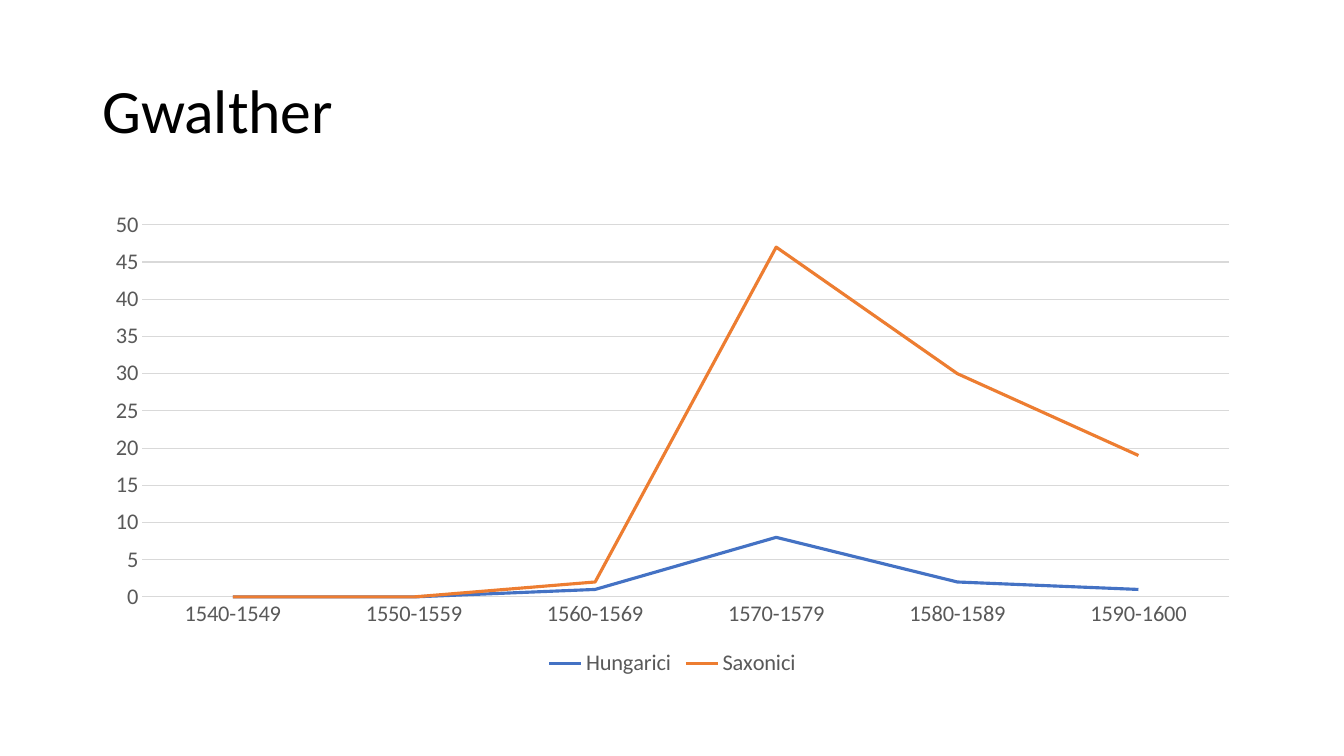
from pptx import Presentation
from pptx.chart.data import CategoryChartData
from pptx.dml.color import RGBColor
from pptx.enum.chart import XL_CHART_TYPE, XL_LEGEND_POSITION, XL_MARKER_STYLE, XL_TICK_MARK
from pptx.enum.text import MSO_ANCHOR, PP_ALIGN
from pptx.util import Inches, Pt

LINE_STACKED = XL_CHART_TYPE.LINE_STACKED
BOTTOM = XL_LEGEND_POSITION.BOTTOM
NO_MARKER = XL_MARKER_STYLE.NONE
NO_TICK = XL_TICK_MARK.NONE
MIDDLE = MSO_ANCHOR.MIDDLE
LEFT = PP_ALIGN.LEFT

BLACK = RGBColor(0x00, 0x00, 0x00)
GRAY = RGBColor(0x59, 0x59, 0x59)
LIGHT = RGBColor(0xD9, 0xD9, 0xD9)
BLUE = RGBColor(0x44, 0x72, 0xC4)
ORANGE = RGBColor(0xED, 0x7D, 0x31)

TITLE = "Gwalther"
PERIODS = ["1540-1549", "1550-1559", "1560-1569", "1570-1579", "1580-1589", "1590-1600"]
SERIES = [
    ("Hungarici", [0, 0, 1, 8, 2, 1], BLUE),
    ("Saxonici", [0, 0, 1, 39, 28, 18], ORANGE),
]
TITLE_BOX = (0.92, 0.4, 11.5, 1.45)
CHART_BOX = (0.92, 2, 11.5, 4.76)
TITLE_FONT = {"name": "Calibri", "size": Pt(44), "bold": False}
CHART_FONT = {"name": "Calibri", "size": Pt(16), "bold": False}


def set_font(font, values, color):
    for key, value in values.items():
        setattr(font, key, value)
    font.color.rgb = color


def set_line(line, color, width):
    line.color.rgb = color
    line.width = Pt(width)


def add_title(slide):
    title = slide.shapes.title
    title.left, title.top, title.width, title.height = map(Inches, TITLE_BOX)
    tf = title.text_frame
    tf.text = TITLE
    tf.vertical_anchor = MIDDLE
    p = tf.paragraphs[0]
    p.alignment = LEFT
    p.line_spacing = 0.9
    set_font(p.runs[0].font, TITLE_FONT, BLACK)


def add_line_chart(slide):
    data = CategoryChartData()
    data.categories = PERIODS
    for name, values, _ in SERIES:
        data.add_series(name, values)
    chart = slide.shapes.add_chart(LINE_STACKED, *map(Inches, CHART_BOX), data).chart
    set_font(chart.font, CHART_FONT, BLACK)
    chart.has_title = False
    chart.has_legend = True
    chart.legend.position = BOTTOM
    chart.legend.include_in_layout = False
    set_font(chart.legend.font, CHART_FONT, GRAY)

    for axis in (chart.category_axis, chart.value_axis):
        axis.major_tick_mark = NO_TICK
        axis.minor_tick_mark = NO_TICK
        set_font(axis.tick_labels.font, CHART_FONT, GRAY)
    set_line(chart.category_axis.format.line, LIGHT, 0.75)
    value_axis = chart.value_axis
    value_axis.format.line.fill.background()
    value_axis.minimum_scale, value_axis.maximum_scale, value_axis.major_unit = 0, 50, 5
    set_line(value_axis.major_gridlines.format.line, LIGHT, 0.75)

    plot = chart.plots[0]
    plot.vary_by_categories = False
    for series, (_, _, color) in zip(plot.series, SERIES):
        series.smooth = False
        series.marker.style = NO_MARKER
        set_line(series.format.line, color, 2.25)


def main():
    prs = Presentation()
    prs.slide_width, prs.slide_height = Inches(13.33), Inches(7.5)
    slide = prs.slides.add_slide(prs.slide_layouts[5])
    add_title(slide)
    add_line_chart(slide)
    prs.save("out.pptx")


if __name__ == "__main__":
    main()
